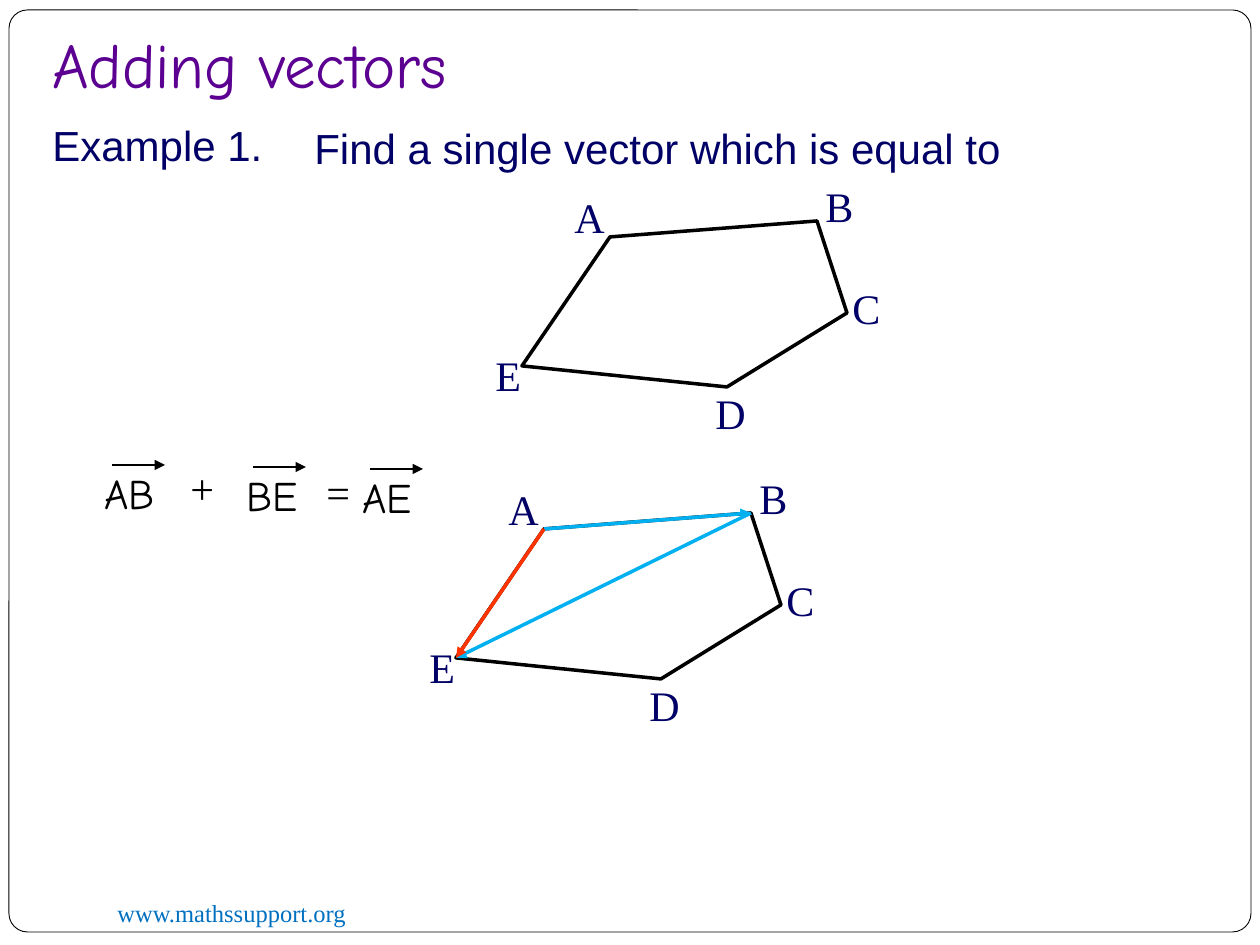
import pptx
import pptx.dml.color
import pptx.enum.shapes
import pptx.enum.text
import pptx.oxml
import pptx.util
from dataclasses import dataclass

PX = 914400 / 126  # EMU per px


@dataclass(frozen=True)
class Theme:
    paper: str = "FFFFFF"
    ink: str = "000000"
    navy: str = "010066"
    purple: str = "5B0091"
    link: str = "0070C0"
    step: str = "00B0F0"
    result: str = "FF3300"
    sans: str = "Arial"
    serif: str = "Times New Roman"
    hand: str = "Comic Neue"
    title_size: int = 36
    body_size: int = 24
    footer_size: int = 14


THEME = Theme()
VERTICES = {"E": (0, 145), "A": (88, 16), "B": (295, 0), "C": (325, 92), "D": (205, 166)}
VERTEX_LABELS = {  # left, top, width, relative to the pentagon
    "E": (-39, 122, 52), "A": (40, -36, 57), "B": (291, -47, 54),
    "C": (318, 55, 54), "D": (181, 160, 57),
}


def emu(px):
    return pptx.util.Emu(round(px * PX))


def rgb(color):
    return pptx.dml.color.RGBColor.from_string(color)


def add_text(slide, text, box, *, font=THEME.serif, size=THEME.body_size,
             color=THEME.navy, wrap=True, centred=False, title=False):
    label = slide.shapes.add_textbox(*map(emu, box))
    frame = label.text_frame
    frame.word_wrap = wrap
    if title:
        frame.vertical_anchor = pptx.enum.text.MSO_ANCHOR.BOTTOM
        frame.margin_bottom = pptx.util.Inches(0.1)
    else:
        frame.auto_size = pptx.enum.text.MSO_AUTO_SIZE.SHAPE_TO_FIT_TEXT
    paragraph = frame.paragraphs[0]
    if centred:
        paragraph.alignment = pptx.enum.text.PP_ALIGN.CENTER
    run = paragraph.add_run()
    run.text = text
    run.font.name = font
    run.font.size = pptx.util.Pt(size)
    run.font.color.rgb = rgb(color)


def add_arrow(slide, start, end, color=THEME.ink, width=2):
    arrow = slide.shapes.add_connector(
        pptx.enum.shapes.MSO_CONNECTOR.STRAIGHT, *map(emu, (*start, *end)))
    arrow.line.color.rgb = rgb(color)
    arrow.line.width = pptx.util.Pt(width)
    namespace = pptx.oxml.ns.nsdecls("a")
    arrow.line._get_or_add_ln().append(
        pptx.oxml.parse_xml(f'<a:tailEnd {namespace} type="triangle"/>'))
    arrow._element.spPr.append(pptx.oxml.parse_xml(f"<a:effectLst {namespace}/>"))


def add_page_frame(slide, left, top, width, height):
    """Draw the rounded border and the web address at its foot."""
    border = slide.shapes.add_shape(
        pptx.enum.shapes.MSO_SHAPE.ROUNDED_RECTANGLE, *map(emu, (left, top, width, height)))
    border.adjustments[0] = 0.02
    border.shadow.inherit = False
    border.fill.solid()
    border.fill.fore_color.rgb = rgb(THEME.paper)
    border.line.color.rgb = rgb(THEME.ink)
    border.line.width = pptx.util.Pt(0.5)
    add_text(slide, "www.mathssupport.org", (left + 96, top + height - 40, 410, 43),
             size=THEME.footer_size, color=THEME.link)


def add_heading(slide, left, top):
    add_text(slide, "Adding vectors", (left, top, 1071, 84), font=THEME.hand,
             size=THEME.title_size, color=THEME.purple, title=True)
    add_text(slide, "Example 1.", (left, top + 83, 243, 63), font=THEME.sans)
    add_text(slide, "Find a single vector which is equal to",
             (left + 262, top + 86, 905, 63), font=THEME.sans)


def add_pentagon(slide, left, top, vectors=()):
    """Draw ABCDE with its labels, then the vectors (ends, color) between vertices."""
    corners = {name: (left + x, top + y) for name, (x, y) in VERTICES.items()}
    first, *rest = corners.values()
    builder = slide.shapes.build_freeform(*first, scale=PX)
    builder.add_line_segments(rest, close=True)
    outline = builder.convert_to_shape()
    outline.shadow.inherit = False
    outline.fill.background()
    outline.line.color.rgb = rgb(THEME.ink)
    outline.line.width = pptx.util.Pt(2)
    for name, (x, y, width) in VERTEX_LABELS.items():
        add_text(slide, name, (left + x, top + y, width, 63), wrap=False)
    for (start, end), color in vectors:
        add_arrow(slide, corners[start], corners[end], color)


def add_vector_name(slide, name, left, top, width, centred=False):
    add_text(slide, name, (left, top, width, 63), font=THEME.hand, color=THEME.ink,
             wrap=False, centred=centred)
    add_arrow(slide, (left + 20, top + 4), (left + 73, top + 4), width=1.5)


def add_equation(slide, left, top):
    add_vector_name(slide, "AB", left, top, 83)
    add_vector_name(slide, "BE", left + 141, top + 2, 78, centred=True)
    add_vector_name(slide, "AE", left + 258, top + 4, 83)
    for sign, x, y in (("+", 86, -5), ("=", 222, -1)):
        add_text(slide, sign, (left + x, top + y, 47, 63), color=THEME.ink)


def main():
    presentation = pptx.Presentation()
    presentation.slide_width = emu(1260)
    presentation.slide_height = emu(945)
    slide = presentation.slides.add_slide(presentation.slide_layouts[6])
    add_page_frame(slide, 9, 10, 1242, 922)
    add_heading(slide, 40, 30)
    add_pentagon(slide, 522, 221)
    add_pentagon(slide, 456, 513, vectors=(
        ("AB", THEME.step), ("BE", THEME.step), ("AE", THEME.result)))
    add_equation(slide, 92, 461)
    presentation.save("out.pptx")


if __name__ == "__main__":
    main()
